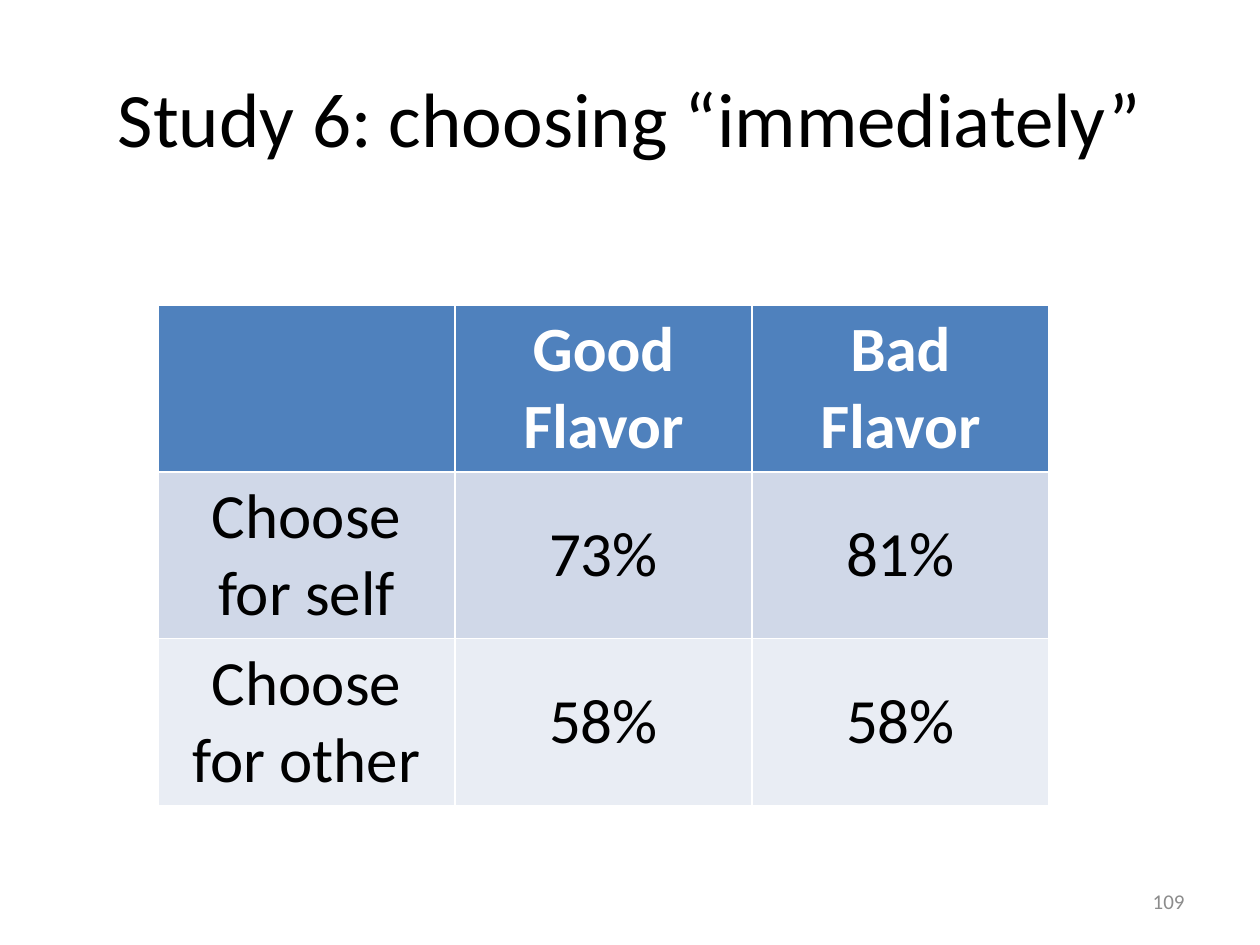
from pptx import Presentation
from pptx.dml.color import RGBColor
from pptx.enum.text import MSO_ANCHOR, PP_ALIGN
from pptx.util import Pt

SCALE = 914400 / 126
FONT = "Calibri"
MIDDLE = MSO_ANCHOR.MIDDLE
CENTER, RIGHT = PP_ALIGN.CENTER, PP_ALIGN.RIGHT
TITLE_ONLY = 5

ROWS = [
    ("", "Good Flavor", "Bad Flavor"),
    ("Choose for self", "73%", "81%"),
    ("Choose for other", "58%", "58%"),
]
FILLS = ["4F81BD", "D0D8E8", "E9EDF4"]


def px(n):
    return round(n * SCALE)


def color(code):
    return RGBColor.from_string(code)


def write(frame, text, size, code, align=CENTER, bold=False):
    frame.text = text
    frame.word_wrap = True
    frame.vertical_anchor = MIDDLE
    for para in frame.paragraphs:
        para.alignment = align
        for run in para.runs:
            run.font.name = FONT
            run.font.size = Pt(size)
            run.font.bold = bold
            run.font.color.rgb = color(code)


def add_title(slide, text):
    title = slide.shapes.title
    title.left, title.top = px(63), px(38)
    title.width, title.height = px(1134), px(158)
    write(title.text_frame, text, 44, "000000")


def add_number(slide, text):
    box = slide.shapes.add_textbox(px(903), px(876), px(294), px(50))
    write(box.text_frame, text, 12, "8C8C8C", RIGHT)


def add_grid(slide):
    """Add the results table; its default style draws the white rules."""
    frame = slide.shapes.add_table(
        len(ROWS), len(ROWS[0]), px(158), px(305), px(891), px(498))
    table = frame.table
    for r, (row, fill) in enumerate(zip(ROWS, FILLS)):
        head = r == 0
        for c, text in enumerate(row):
            cell = table.cell(r, c)
            cell.fill.solid()
            cell.fill.fore_color.rgb = color(fill)
            cell.vertical_anchor = MIDDLE
            if text:
                write(cell.text_frame, text, 36,
                      "FFFFFF" if head else "000000", bold=head)


def main():
    deck = Presentation()
    deck.slide_width, deck.slide_height = px(1260), px(945)
    slide = deck.slides.add_slide(deck.slide_layouts[TITLE_ONLY])
    add_title(slide, "Study 6: choosing “immediately”")
    add_grid(slide)
    add_number(slide, "109")
    deck.save("out.pptx")


if __name__ == "__main__":
    main()
